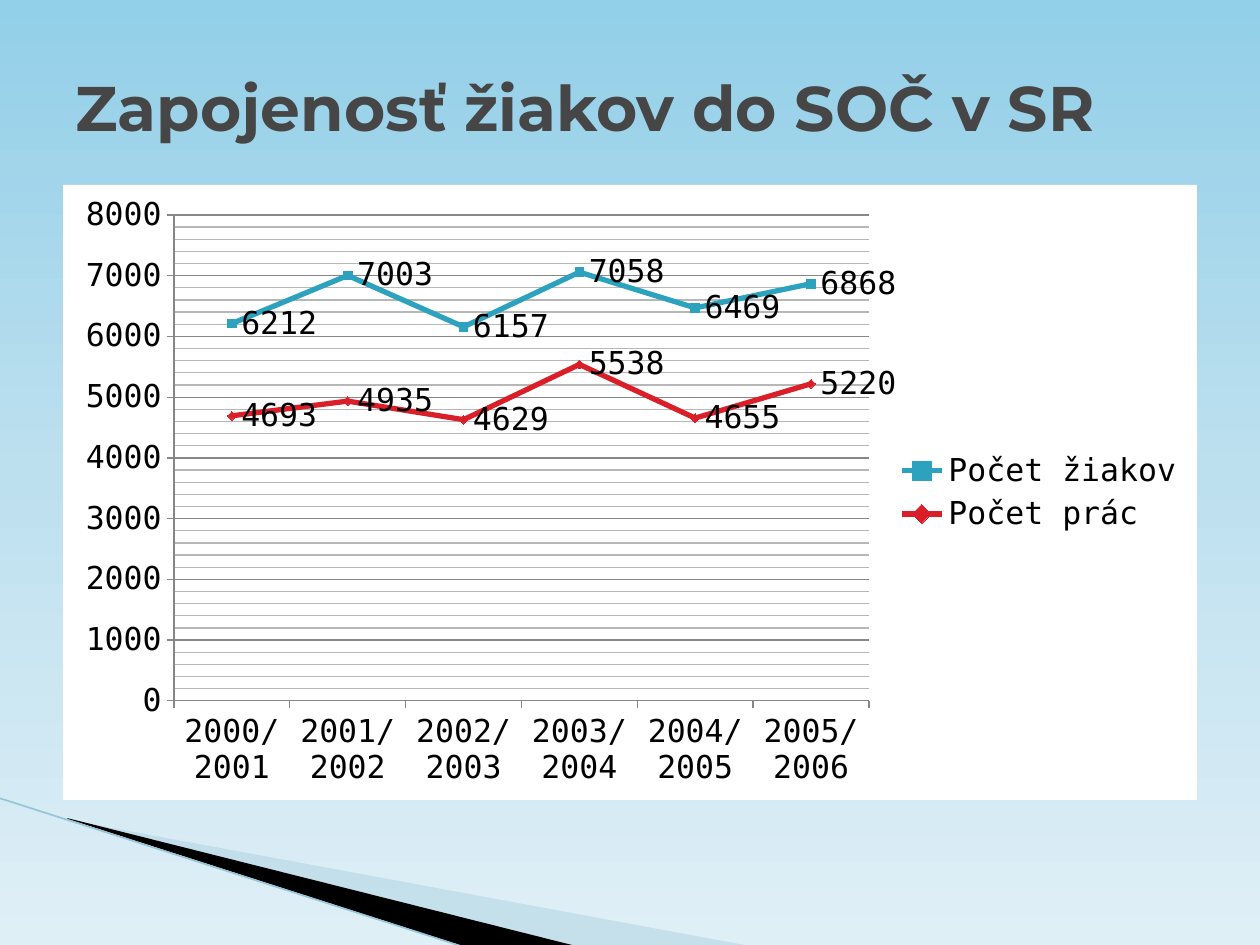
from copy import deepcopy
from dataclasses import dataclass

from lxml.etree import SubElement
from pptx import Presentation
from pptx.chart.data import CategoryChartData
from pptx.dml.color import RGBColor
from pptx.enum.chart import (XL_CHART_TYPE, XL_LABEL_POSITION,
                             XL_LEGEND_POSITION, XL_MARKER_STYLE, XL_TICK_MARK)
from pptx.enum.shapes import MSO_CONNECTOR
from pptx.enum.text import MSO_ANCHOR, PP_ALIGN
from pptx.oxml import parse_xml
from pptx.oxml.ns import nsdecls, qn
from pptx.util import Pt

EMU_PER_PX = 914400 / 126


@dataclass(frozen=True)
class Theme:
    title_font: str = "Montserrat"
    chart_font: str = "DejaVu Sans Mono"
    title_size: int = 36
    chart_size: int = 18
    title: str = "464646"
    text: str = "000000"
    panel: str = "FFFFFF"
    axis: str = "878787"
    minor_grid: str = "B7B7B7"
    wedge_light: str = "A0CBDC"
    wedge_dark: str = "000000"
    edge: str = "97C5D8"
    background: tuple = ((0, "92CFE8"), (50, "BDE0EF"), (100, "DFEFF6"))


THEME = Theme()
CATEGORIES = [f"{year}/{year + 1}" for year in range(2000, 2006)]
SERIES = (
    ("Počet žiakov", (6212, 7003, 6157, 7058, 6469, 6868), "2DA2BF", XL_MARKER_STYLE.SQUARE),
    ("Počet prác", (4693, 4935, 4629, 5538, 4655, 5220), "DA1F28", XL_MARKER_STYLE.DIAMOND),
)


def px(value):
    return round(value * EMU_PER_PX)


def color(value):
    return RGBColor.from_string(value)


def style_line(line, line_color, points):
    line.color.rgb = color(line_color)
    line.width = Pt(points)


def paint_background(slide):
    fill = slide.background.fill
    fill.gradient()
    fill.gradient_angle = 270
    stop_list = slide.element.find(".//" + qn("a:gsLst"))
    stop_list.insert(1, deepcopy(stop_list[0]))
    for stop, (position, stop_color) in zip(fill.gradient_stops, THEME.background):
        stop.position = position / 100
        stop.color.rgb = color(stop_color)


def add_wedge(slide, box, points, fill_color, opacity=100):
    left, top = box
    (start_x, start_y), *others = [(left + x, top + y) for x, y in points]
    builder = slide.shapes.build_freeform(start_x, start_y, scale=EMU_PER_PX)
    builder.add_line_segments(others, close=True)
    shape = builder.convert_to_shape()
    shape.shadow.inherit = False
    shape.line.fill.background()
    shape.fill.solid()
    shape.fill.fore_color.rgb = color(fill_color)
    if opacity < 100:
        fill_element = shape.element.find(".//" + qn("a:srgbClr"))
        SubElement(fill_element, qn("a:alpha"), val=str(opacity * 1000))


def add_corner(slide, box):
    left, top = box
    # Light and dark wedges
    add_wedge(slide, box, ((70, 22), (751, 148), (576, 148), (70, 21)),
              THEME.wedge_light, 40)
    add_wedge(slide, box, ((68, 20), (577, 148), (470, 150), (69, 21)), THEME.wedge_dark)
    # Thin edge
    edge = slide.shapes.add_connector(
        MSO_CONNECTOR.STRAIGHT, px(left), px(top), px(left + 468), px(top + 150))
    style_line(edge.line, THEME.edge, 0.95)
    SubElement(edge.element.spPr, qn("a:effectLst"))


def format_axes(chart):
    for axis in (chart.category_axis, chart.value_axis):
        axis.major_tick_mark = XL_TICK_MARK.OUTSIDE
        axis.minor_tick_mark = XL_TICK_MARK.NONE
        style_line(axis.format.line, THEME.axis, 0.75)
    value_axis = chart.value_axis
    value_axis.minimum_scale = 0
    value_axis.maximum_scale = 8000
    value_axis.major_unit = 1000
    value_axis.minor_unit = 200
    value_axis.has_major_gridlines = value_axis.has_minor_gridlines = True
    style_line(value_axis.major_gridlines.format.line, THEME.axis, 0.75)
    # Minor gridlines can only be coloured through XML
    chart.element.find(".//" + qn("c:minorGridlines")).append(parse_xml(
        f'<c:spPr {nsdecls("c", "a")}><a:ln w="{Pt(0.75)}"><a:solidFill>'
        f'<a:srgbClr val="{THEME.minor_grid}"/></a:solidFill></a:ln></c:spPr>'))


def format_series(series, series_color, marker_style):
    series.smooth = False
    style_line(series.format.line, series_color, 3)
    marker = series.marker
    marker.style = marker_style
    marker.size = 5
    marker.format.fill.solid()
    marker.format.fill.fore_color.rgb = color(series_color)
    marker.format.line.color.rgb = color(series_color)
    labels = series.data_labels
    labels.show_value = True
    labels.position = XL_LABEL_POSITION.RIGHT


def place_plot(chart, box, plot_box):
    """Fix the inner plot area, given in px from the chart's corner."""
    width, height = box[2:]
    plot_area = chart.element.find(".//" + qn("c:plotArea"))
    layout = plot_area.find(qn("c:layout"))
    if layout is not None:
        plot_area.remove(layout)
    layout = parse_xml(f"<c:layout {nsdecls('c')}><c:manualLayout/></c:layout>")
    plot_area.insert(0, layout)
    settings = [("layoutTarget", "inner"), ("xMode", "edge"), ("yMode", "edge")]
    settings += [(name, f"{value / total:.4f}") for name, value, total in
                 zip("xywh", plot_box, (width, height) * 2)]
    for name, value in settings:
        SubElement(layout[0], qn("c:" + name), val=value)


def add_participation_chart(slide, box):
    data = CategoryChartData()
    data.categories = CATEGORIES
    for name, values, *_ in SERIES:
        data.add_series(name, values)
    chart = slide.shapes.add_chart(
        XL_CHART_TYPE.LINE_MARKERS, *map(px, box), data).chart
    chart.has_title = False
    chart.font.name = THEME.chart_font
    chart.font.size = Pt(THEME.chart_size)
    chart.font.color.rgb = color(THEME.text)

    # White panel behind the chart
    chart.element.find(qn("c:chart")).addnext(parse_xml(
        f'<c:spPr {nsdecls("c", "a")}><a:solidFill><a:srgbClr val="{THEME.panel}"/>'
        "</a:solidFill><a:ln><a:noFill/></a:ln></c:spPr>"))

    # Axes, lines and legend
    format_axes(chart)
    chart.plots[0].vary_by_categories = False
    for series, (_, _, series_color, marker_style) in zip(chart.plots[0].series, SERIES):
        format_series(series, series_color, marker_style)
    chart.has_legend = True
    chart.legend.position = XL_LEGEND_POSITION.RIGHT
    chart.legend.include_in_layout = False
    place_plot(chart, box, (111, 30, 695, 486))


def place_title(slide, box, text):
    title = slide.shapes.title
    title.left, title.top, title.width, title.height = map(px, box)
    title.element.getparent().append(title.element)
    frame = title.text_frame
    frame.word_wrap = True
    frame.vertical_anchor = MSO_ANCHOR.MIDDLE
    paragraph = frame.paragraphs[0]
    paragraph.alignment = PP_ALIGN.LEFT
    run = paragraph.add_run()
    run.text = text
    run.font.name = THEME.title_font
    run.font.size = Pt(THEME.title_size)
    run.font.bold = True
    run.font.color.rgb = color(THEME.title)


def main():
    presentation = Presentation()
    presentation.slide_width, presentation.slide_height = px(1260), px(945)
    slide = presentation.slides.add_slide(presentation.slide_layouts[5])
    paint_background(slide)
    add_corner(slide, (-1, 798))
    add_participation_chart(slide, (63, 185, 1134, 615))
    place_title(slide, (63, 38, 1134, 137), "Zapojenosť žiakov do SOČ v SR")
    presentation.save("out.pptx")


if __name__ == "__main__":
    main()
